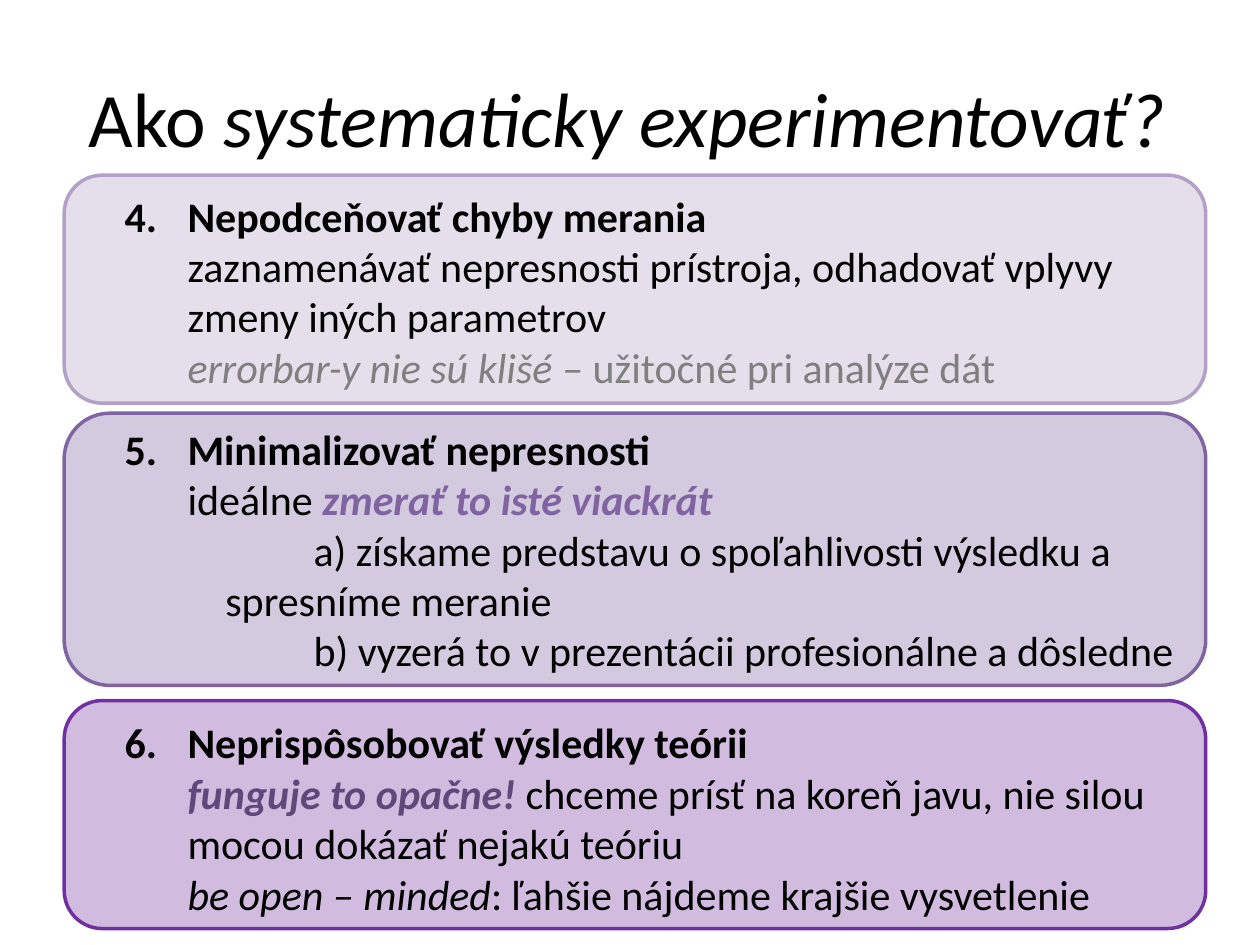
from dataclasses import dataclass

from lxml import etree
from pptx import Presentation
from pptx import util as u
from pptx.dml.color import RGBColor
from pptx.enum import shapes, text
from pptx.oxml import ns


@dataclass(frozen=True)
class Theme:
    """Colours and type sizes of the slide."""
    font: str = "Calibri"
    title_size: int = 44
    body_size: int = 24
    line_width: int = 2
    ink: str = "000000"
    muted: str = "7F7F7F"
    violet: str = "8064A2"
    plum: str = "5F497A"
    lilac_line: str = "B2A0C7"
    lilac_fill: str = "E5DFEC"
    lavender_fill: str = "CCC0D9"
    purple: str = "7030A0"


THEME = Theme()
HEADING, BODY, ITEM = (0.5, -0.5), (0.5, 0), (0.8, 0.7)
PLAIN, BOLD, ITALIC = {}, {"bold": True}, {"italic": True}
STRONG = {"bold": True, "italic": True}

TITLE = [((0, 0), [("Ako ", PLAIN), ("systematicky experimentovať?", ITALIC)])]

CARDS = [
    {
        "top": 1.39, "height": 1.81, "text_top": 1.46, "text_height": 1.72, "grouped": True,
        "fill": THEME.lilac_fill, "opacity": 100, "line": THEME.lilac_line,
        "paras": [
            (HEADING, [("4.\tNepodceňovať chyby merania", BOLD)]),
            (BODY, [("zaznamenávať nepresnosti prístroja, odhadovať vplyvy zmeny iných parametrov", PLAIN)]),
            (BODY, [("errorbar-y nie sú klišé ", {"italic": True, "color": THEME.muted}),
                    ("– užitočné pri analýze dát", {"color": THEME.muted})]),
        ],
    },
    {
        "top": 3.28, "height": 2.16, "text_top": 3.31, "text_height": 2.12, "grouped": False,
        "fill": THEME.lavender_fill, "opacity": 83, "line": THEME.violet,
        "paras": [
            (HEADING, [("5.\tMinimalizovať nepresnosti", BOLD)]),
            (BODY, [("ideálne ", PLAIN), ("zmerať to isté viackrát", {**STRONG, "color": THEME.violet})]),
            (ITEM, [("a) získame predstavu o spoľahlivosti výsledku a spresníme meranie", PLAIN)]),
            (ITEM, [("b) vyzerá to v prezentácii profesionálne a dôsledne", PLAIN)]),
        ],
    },
    {
        "top": 5.56, "height": 1.81, "text_top": 5.64, "text_height": 1.78, "grouped": True,
        "fill": THEME.purple, "opacity": 32, "line": THEME.purple,
        "paras": [
            (HEADING, [("6.\tNeprispôsobovať výsledky teórii", BOLD)]),
            (BODY, [("funguje to opačne! ", {**STRONG, "color": THEME.plum}),
                    ("chceme prísť na koreň javu, nie silou mocou dokázať nejakú teóriu", PLAIN)]),
            (BODY, [("be open – minded", ITALIC), (": ľahšie nájdeme krajšie vysvetlenie", PLAIN)]),
        ],
    },
]
CARD_LEFT, CARD_WIDTH = 0.51, 9.06
TEXT_LEFT, TEXT_WIDTH = 0.89, 8.6


def add_span(para, words, size, color=THEME.ink, bold=False, italic=False):
    """Append one formatted run to a paragraph."""
    span = para.add_run()
    span.text = words
    span.font.name = THEME.font
    span.font.size = u.Pt(size)
    span.font.bold = bold
    span.font.italic = italic
    span.font.color.rgb = RGBColor.from_string(color)


def add_text(parent, bounds, paras, size, align=text.PP_ALIGN.LEFT, anchor=text.MSO_ANCHOR.TOP):
    """Add a wrapped text box holding indented paragraphs."""
    box = parent.add_textbox(*map(u.Inches, bounds))
    frame = box.text_frame
    frame.word_wrap = True
    frame.vertical_anchor = anchor
    for index, ((margin, indent), spans) in enumerate(paras):
        para = frame.add_paragraph() if index else frame.paragraphs[0]
        para.alignment = align
        properties = para._p.get_or_add_pPr()
        properties.set("marL", str(u.Inches(margin)))
        properties.set("indent", str(u.Inches(indent)))
        for words, style in spans:
            add_span(para, words, size, **style)


def add_card(page, card):
    """Add a rounded panel with its text."""
    parent = page.shapes.add_group_shape().shapes if card["grouped"] else page.shapes
    bounds = (CARD_LEFT, card["top"], CARD_WIDTH, card["height"])
    panel = parent.add_shape(shapes.MSO_SHAPE.ROUNDED_RECTANGLE, *map(u.Inches, bounds))
    panel.shadow.inherit = False
    panel.fill.solid()
    panel.fill.fore_color.rgb = RGBColor.from_string(card["fill"])
    if card["opacity"] < 100:
        color = panel._element.spPr.find(ns.qn("a:solidFill")).find(ns.qn("a:srgbClr"))
        etree.SubElement(color, ns.qn("a:alpha")).set("val", str(card["opacity"] * 1000))
    panel.line.color.rgb = RGBColor.from_string(card["line"])
    panel.line.width = u.Pt(THEME.line_width)
    text_bounds = (TEXT_LEFT, card["text_top"], TEXT_WIDTH, card["text_height"])
    add_text(parent, text_bounds, card["paras"], THEME.body_size)


def main():
    """Build and save the slide."""
    deck = Presentation()
    deck.slide_width, deck.slide_height = u.Inches(10), u.Inches(7.5)
    page = deck.slides.add_slide(deck.slide_layouts[6])
    add_text(page.shapes, (0.08, 0.3, 9.8, 1.25), TITLE, THEME.title_size,
             align=text.PP_ALIGN.CENTER, anchor=text.MSO_ANCHOR.MIDDLE)
    for card in CARDS:
        add_card(page, card)
    deck.save("out.pptx")


if __name__ == "__main__":
    main()
